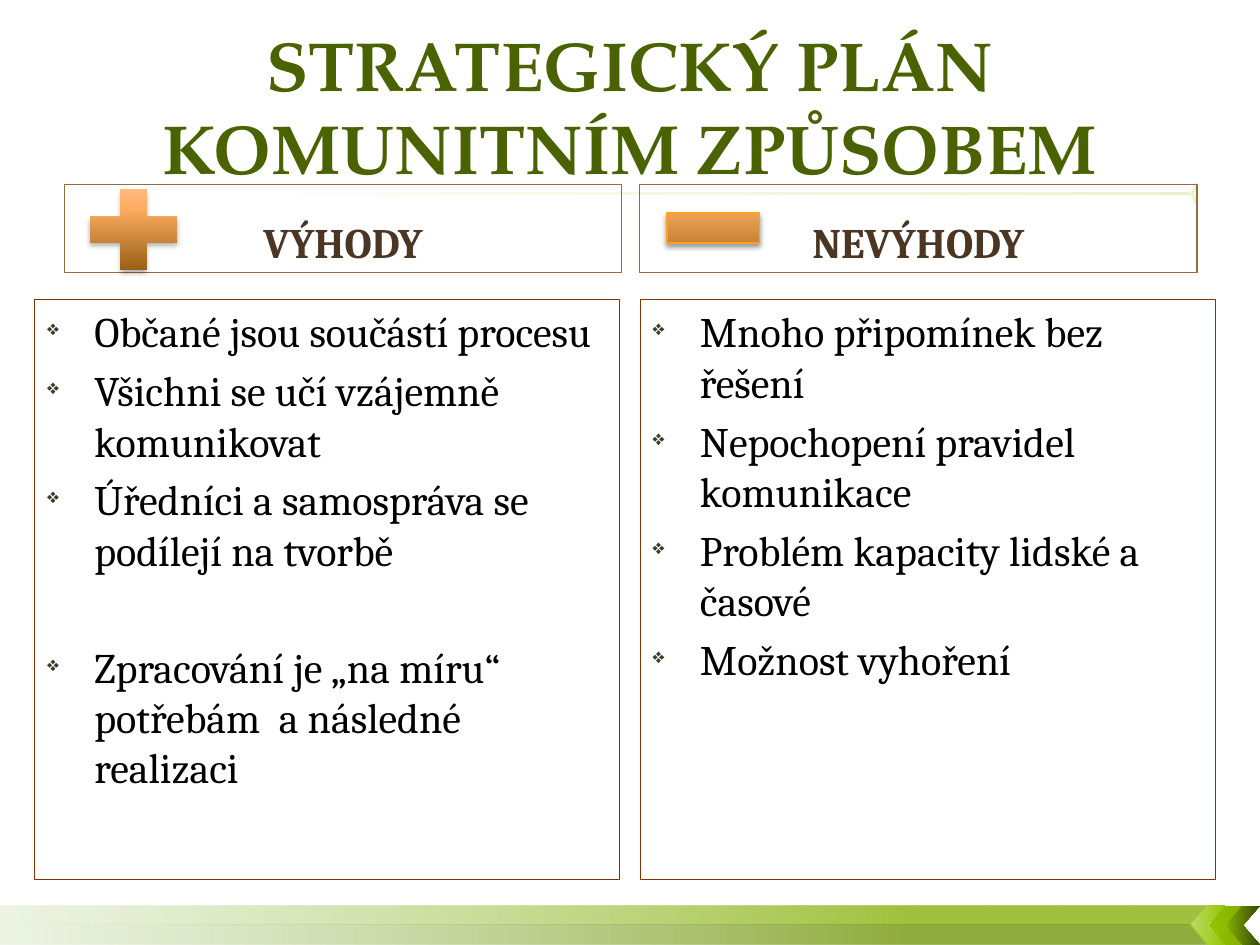
from lxml import etree
from pptx import Presentation
from pptx.dml.color import RGBColor
from pptx.enum import shapes, text
from pptx.oxml import ns
from pptx.util import Pt

FOREST = RGBColor(0x4A, 0x63, 0x00)
BROWN = RGBColor(0x4A, 0x36, 0x22)
TAN = RGBColor(0x95, 0x6B, 0x43)
RUST = RGBColor(0x80, 0x34, 0x00)
OLIVE = RGBColor(0x3E, 0x3D, 0x2D)
ORANGE = RGBColor(0xFE, 0xA0, 0x22)
BLACK = RGBColor(0, 0, 0)
LIME = RGBColor(0x94, 0xC6, 0x00)
GREEN = RGBColor(0x83, 0xAF, 0x00)
MOSS = RGBColor(0x6D, 0x92, 0x00)
DARK = RGBColor(0x36, 0x49, 0x00)
PALE = RGBColor(0xDC, 0xEA, 0xCC)
COPPER = [(0, RGBColor(0xFE, 0xC3, 0x99), 100), (30, RGBColor(0xFE, 0xAD, 0x61), 100),
          (88, RGBColor(0x96, 0x5F, 0x14), 100), (100, RGBColor(0x7E, 0x4F, 0x11), 100)]
KIND = shapes.MSO_SHAPE
ALIGN = text.PP_ALIGN
ANCHOR = text.MSO_ANCHOR


def add(parent, tag, **attrs):
    node = etree.SubElement(parent, ns.qn(tag))
    for key, val in attrs.items():
        node.set(key, str(val))
    return node


def tint(parent, color, alpha):
    add(add(parent, "a:srgbClr", val=color), "a:alpha", val=alpha * 1000)


def shade(shape, stops, angle):
    """Fill with a gradient of (position, colour, opacity) stops."""
    shape.shadow.inherit = False
    shape.line.fill.background()
    shape.fill.background()
    props = shape._element.spPr
    grad = etree.Element(ns.qn("a:gradFill"), rotWithShape="1")
    row = add(grad, "a:gsLst")
    for pos, color, alpha in stops:
        tint(add(row, "a:gs", pos=pos * 1000), color, alpha)
    add(grad, "a:lin", ang=angle * 60000, scaled=0)
    props.replace(props.find(ns.qn("a:noFill")), grad)


def put(slide, kind, left, top, width, height):
    return slide.shapes.add_shape(kind, Pt(left), Pt(top), Pt(width), Pt(height))


def chevron(slide, left, top, width, height, stops):
    shape = put(slide, KIND.CHEVRON, left, top, width, height)
    shape._element.spPr.find(ns.qn("a:xfrm")).set("flipH", "1")
    shade(shape, stops, 180)


def footer(slide, left, top, width, height):
    # Two bands that meet in a point
    half = height / 2
    for edge, color in ((0, GREEN), (height, MOSS)):
        pen = slide.shapes.build_freeform(width, edge, scale=Pt(1))
        pen.add_line_segments([(0, edge), (0, half), (width - 10, half)], close=True)
        band = pen.convert_to_shape(Pt(left), Pt(top))
        shade(band, [(25, color, 75), (100, PALE, 50)], 180)
    # Three chevrons at the right end
    tones = [(LIME, 60, LIME), (LIME, 100, GREEN), (GREEN, 100, DARK)]
    for i, (start, alpha, end) in enumerate(tones):
        chevron(slide, left + 680.4 + i * 10.1, top, 19.4, height,
                [(0, start, alpha), (100, end, 100)])


def rule(slide, left, top, width, height):
    chevron(slide, left + width - 4.3, top, 4.3, height,
            [(0, LIME, 20), (100, LIME, 15)])
    bar = put(slide, KIND.RECTANGLE, left, top + 5, width - 5, 1.4)
    shade(bar, [(0, LIME, 20), (100, LIME, 4)], 180)


def heading(slide, left, top, width, height, words):
    title = slide.shapes.title
    title.left, title.top = Pt(left), Pt(top)
    title.width, title.height = Pt(width), Pt(height)
    frame = title.text_frame
    frame.text = words
    frame.word_wrap = True
    frame.auto_size = text.MSO_AUTO_SIZE.NONE
    frame.vertical_anchor = ANCHOR.MIDDLE
    par = frame.paragraphs[0]
    par.alignment = ALIGN.CENTER
    style(par, "TeX Gyre Pagella", 39.6, FOREST, True)


def style(par, name, size, color, bold=False):
    font = par.font
    font.name, font.size, font.bold = name, Pt(size), bold
    font.color.rgb = color


def panel(slide, left, top, width, height, edge):
    box = put(slide, KIND.RECTANGLE, left, top, width, height)
    box.shadow.inherit = False
    box.fill.background()
    box.line.color.rgb = edge
    box.line.width = Pt(0.75)
    box.text_frame.word_wrap = True
    return box.text_frame


def label(slide, left, top, width, height, words):
    frame = panel(slide, left, top, width, height, TAN)
    frame.vertical_anchor = ANCHOR.BOTTOM
    par = frame.paragraphs[0]
    par.text = words
    par.alignment = ALIGN.CENTER
    style(par, "Cambria", 24, BROWN, True)


def points(slide, left, top, width, height, items):
    """List of (words, space before) pairs."""
    frame = panel(slide, left, top, width, height, RUST)
    frame.vertical_anchor = ANCHOR.TOP
    for i, (words, gap) in enumerate(items):
        par = frame.add_paragraph() if i else frame.paragraphs[0]
        par.text = words
        par.alignment = ALIGN.LEFT
        par.space_before = Pt(gap)
        props = par._p.get_or_add_pPr()
        props.set("marL", str(Pt(27)))
        props.set("indent", str(Pt(-27)))
        add(add(props, "a:buClr"), "a:srgbClr", val=OLIVE)
        add(props, "a:buSzPct", val=50000)
        add(props, "a:buChar", char="❖")
        style(par, "Cambria", 24, BLACK)


def sign(slide, kind, left, top, width, height, alpha):
    shape = put(slide, kind, left, top, width, height)
    shade(shape, COPPER, 90)
    glow = shape._element.spPr.find(ns.qn("a:effectLst"))
    drop = add(glow, "a:outerShdw", blurRad=Pt(3.1), dist=Pt(2), dir=90 * 60000,
               rotWithShape=0)
    tint(drop, BLACK, alpha)
    return shape


def main():
    deck = Presentation()
    deck.slide_width, deck.slide_height = Pt(720), Pt(540)
    slide = deck.slides.add_slide(deck.slide_layouts[5])

    # Backdrop and title
    footer(slide, 0, 517.5, 690, 22.5)
    rule(slide, 173.5, 105, 511, 11.5)
    heading(slide, 0, 15, 720, 90, "STRATEGICKÝ PLÁN\vKOMUNITNÍM ZPŮSOBEM")

    # Advantages
    label(slide, 36.8, 105.5, 318.5, 50.3, "VÝHODY")
    points(slide, 19.8, 171.2, 334.4, 331.4, [
        ("Občané jsou součástí procesu", 0),
        ("Všichni se učí vzájemně komunikovat", 4.8),
        ("Úředníci a samospráva se podílejí na tvorbě", 4.8),
        ("Zpracování je „na míru“ potřebám  a následné realizaci", 38)])

    # Drawbacks
    label(slide, 365.5, 105.5, 318.5, 50.3, "NEVÝHODY")
    points(slide, 365.9, 171.2, 328.8, 331.4, [
        ("Mnoho připomínek bez řešení", 0),
        ("Nepochopení pravidel komunikace", 4.8),
        ("Problém kapacity lidské a časové", 4.8),
        ("Možnost vyhoření", 4.8)])

    # Signs
    sign(slide, KIND.MATH_PLUS, 42.5, 100, 67.7, 62.6, 30)
    minus = sign(slide, KIND.MATH_MINUS, 371.5, 94.3, 72, 72, 40)
    minus.line.color.rgb = ORANGE
    minus.line.width = Pt(1)

    deck.save("out.pptx")


if __name__ == "__main__":
    main()
